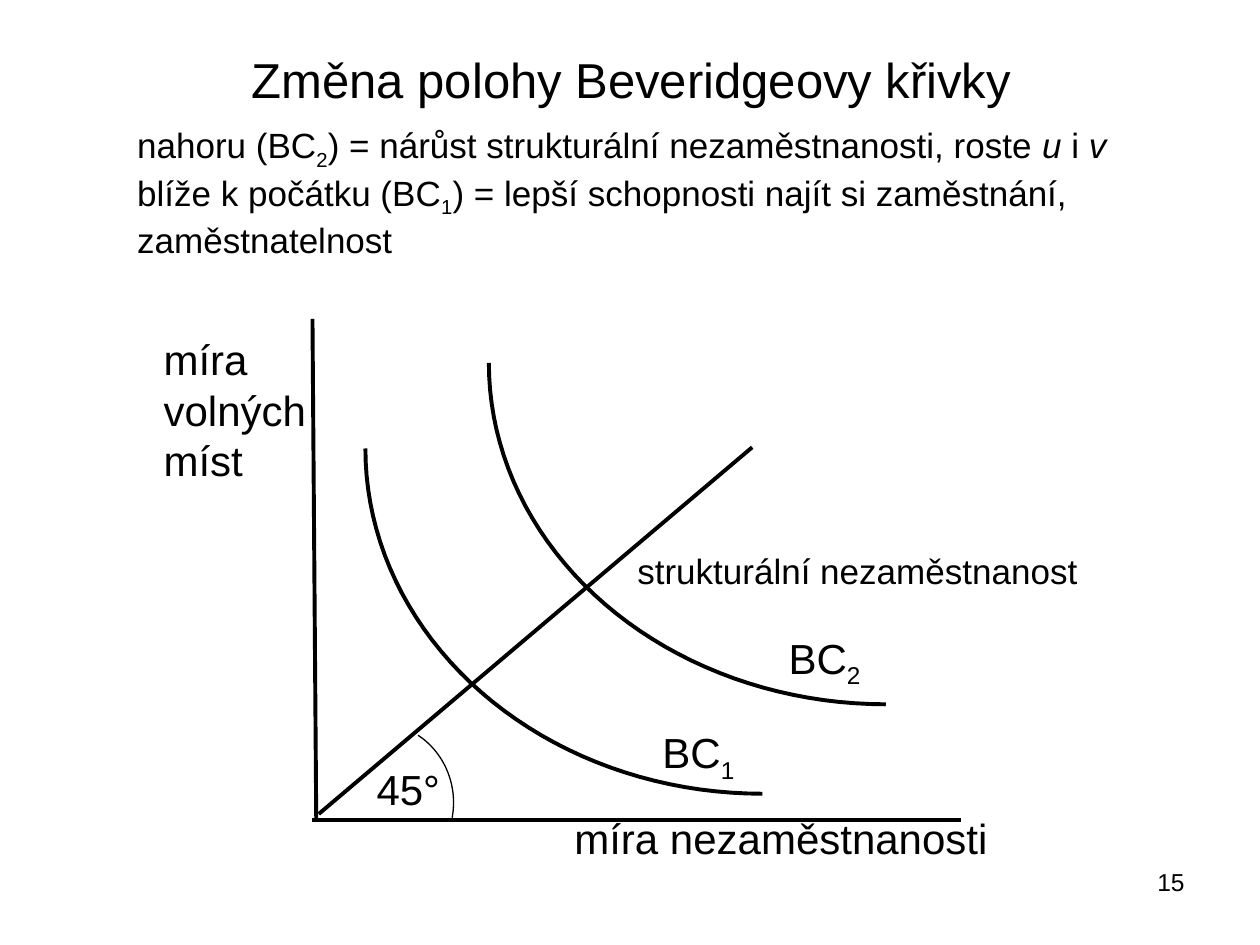
from math import cos, sin, radians
from pptx import Presentation
from pptx.dml.color import RGBColor
from pptx.enum.shapes import MSO_CONNECTOR
from pptx.enum.text import MSO_ANCHOR, PP_ALIGN
from pptx.oxml.ns import qn
from pptx.util import Inches, Pt
from lxml import etree

BLACK = RGBColor(0, 0, 0)
WHITE = RGBColor(255, 255, 255)
LEFT, RIGHT = PP_ALIGN.LEFT, PP_ALIGN.RIGHT
CENTER, JUST = PP_ALIGN.CENTER, PP_ALIGN.JUSTIFY

deck = Presentation()
deck.slide_width, deck.slide_height = Inches(10), Inches(7.5)
slide = deck.slides.add_slide(deck.slide_layouts[5])
slide.background.fill.solid()
slide.background.fill.fore_color.rgb = WHITE
shapes = slide.shapes


def write(frame, lines, size, align):
    """Fill a frame with lines of (text, style) runs: sub, it or plain."""
    for i, line in enumerate(lines):
        para = frame.add_paragraph() if i else frame.paragraphs[0]
        para.alignment = align
        for text, style in line:
            run = para.add_run()
            run.text = text
            font = run.font
            font.name, font.size = "Arial", Pt(size)
            font.color.rgb = BLACK
            if style == "it":
                font.italic = True
            if style == "sub":
                run._r.get_or_add_rPr().set("baseline", "-25000")


# Title
title = shapes.title
title.left, title.top = Inches(0.51), Inches(0)
title.width, title.height = Inches(9), Inches(1.25)
title.text_frame.vertical_anchor = MSO_ANCHOR.MIDDLE
write(title.text_frame, [[("Změna polohy Beveridgeovy křivky", "")]], 28, CENTER)

# Axes and the 45° line
for x1, y1, x2, y2 in [
    (2.48, 2.53, 2.51, 6.51),
    (2.48, 6.51, 7.63, 6.51),
    (2.53, 6.46, 5.97, 3.55),
]:
    line = shapes.add_connector(
        MSO_CONNECTOR.STRAIGHT, Inches(x1), Inches(y1), Inches(x2), Inches(y2))
    line.line.color.rgb = BLACK
    line.line.width = Pt(2.25)
    etree.SubElement(line._element.spPr, qn("a:effectLst"))

# Beveridge curves and angle mark: centre, radii, start and end angle, width
STEPS = 40
for cx, cy, rx, ry, start, end, width in [
    (6.05, 3.56, 3.15, 2.74, 90, 180, 2.25),
    (7.03, 2.88, 3.15, 2.71, 90, 180, 2.25),
    (3, 6.37, 0.6, 0.63, -58, 11, 0.75),
]:
    turns = [radians(start + (end - start) * i / STEPS) for i in range(STEPS + 1)]
    points = [(Inches(cx + rx * cos(t)), Inches(cy + ry * sin(t))) for t in turns]
    pen = shapes.build_freeform(*points[0])
    pen.add_line_segments(points[1:], close=False)
    curve = pen.convert_to_shape()
    curve.shadow.inherit = False
    curve.fill.background()
    curve.line.color.rgb = BLACK
    curve.line.width = Pt(width)

# Explanation, labels and slide number
notes = [
    [("nahoru (BC", ""), ("2", "sub"),
     (") = nárůst strukturální nezaměstnanosti, roste ", ""),
     ("u", "it"), (" i ", ""), ("v", "it")],
    [("blíže k počátku (BC", ""), ("1", "sub"),
     (") = lepší schopnosti najít si zaměstnání,", "")],
    [("zaměstnatelnost", "")],
]
for x, y, w, h, lines, size, align in [
    (0.99, 0.97, 7.95, 1.11, notes, 20, JUST),
    (5.16, 5.72, 1.1, 0.85, [[("BC", ""), ("1", "sub")]], 24, LEFT),
    (6.16, 4.97, 1.15, 0.85, [[("BC", ""), ("2", "sub")]], 24, LEFT),
    (2.89, 6.01, 1.19, 0.85, [[("45°", "")]], 24, LEFT),
    (4.46, 6.4, 3.5, 0.89, [[("míra nezaměstnanosti", "")]], 24, JUST),
    (1.2, 2.6, 1.81, 1.31, [[("míra volných míst", "")]], 24, JUST),
    (4.96, 4.31, 4.09, 0.44, [[("strukturální nezaměstnanost", "")]], 20, LEFT),
    (7.17, 6.83, 2.33, 0.52, [[("15", "")]], 14, RIGHT),
]:
    box = shapes.add_textbox(Inches(x), Inches(y), Inches(w), Inches(h))
    frame = box.text_frame
    frame.word_wrap = lines is not notes
    if lines is notes:
        frame.vertical_anchor = MSO_ANCHOR.MIDDLE
    write(frame, lines, size, align)

deck.save("out.pptx")
